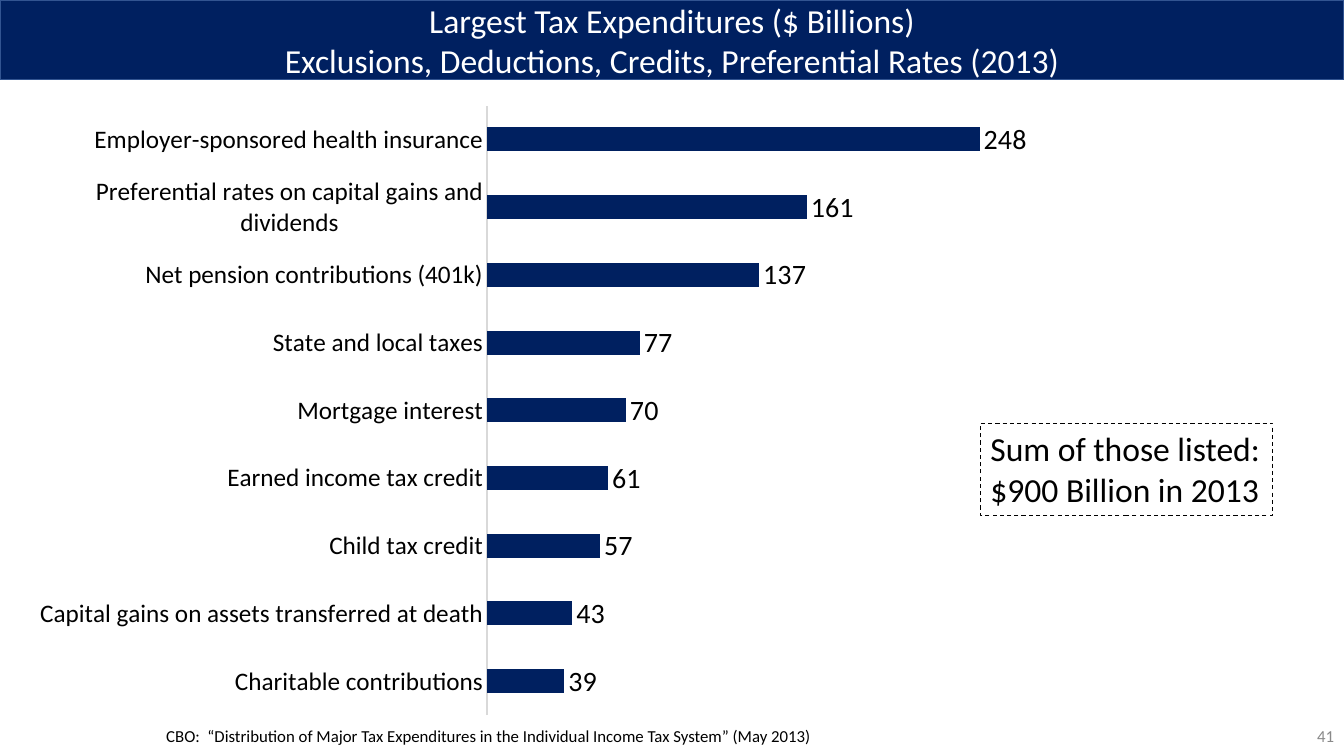
from dataclasses import dataclass

import pptx
import pptx.chart.data
import pptx.dml.color
import pptx.enum.chart
import pptx.enum.dml
import pptx.enum.shapes
import pptx.enum.text
import pptx.oxml
import pptx.util
from pptx.util import Cm

ALIGN = pptx.enum.text.PP_ALIGN
ANCHOR = pptx.enum.text.MSO_ANCHOR

EXPENDITURES = {
    "Charitable contributions": 39,
    "Capital gains on assets transferred at death": 43,
    "Child tax credit": 57,
    "Earned income tax credit": 61,
    "Mortgage interest": 70,
    "State and local taxes": 77,
    "Net pension contributions (401k)": 137,
    "Preferential rates on capital gains and dividends": 161,
    "Employer-sponsored health insurance": 248,
}


@dataclass(frozen=True)
class Theme:
    font: str = "Calibri"
    navy: str = "002060"
    banner_edge: str = "325491"
    white: str = "FFFFFF"
    black: str = "000000"
    gray: str = "898989"
    axis: str = "D9D9D9"
    heading: int = 24
    value: int = 20
    category: int = 18
    small: int = 12


def rgb(color):
    return pptx.dml.color.RGBColor.from_string(color)


def style_font(font, name, size, color):
    font.name = name
    font.size = pptx.util.Pt(size)
    font.color.rgb = rgb(color)


def write_text(frame, text, font, size, color, align=ALIGN.LEFT,
               anchor=ANCHOR.TOP, wrap=True):
    frame.word_wrap = wrap
    frame.vertical_anchor = anchor
    for index, line in enumerate(text.split("\n")):
        paragraph = frame.paragraphs[0] if index == 0 else frame.add_paragraph()
        paragraph.alignment = align
        run = paragraph.add_run()
        run.text = line
        style_font(run.font, font, size, color)


class SlideBuilder:
    def __init__(self, slide, theme):
        self.slide = slide
        self.theme = theme

    def text(self, text, box, **style):
        label = self.slide.shapes.add_textbox(*map(Cm, box))
        write_text(label.text_frame, text, self.theme.font, **style)

    def panel(self, text, box, edge, edge_width, fill=None, dash=None, **style):
        panel = self.slide.shapes.add_shape(
            pptx.enum.shapes.MSO_SHAPE.RECTANGLE, *map(Cm, box))
        panel.shadow.inherit = False
        if fill:
            panel.fill.solid()
            panel.fill.fore_color.rgb = rgb(fill)
        else:
            panel.fill.background()
        panel.line.color.rgb = rgb(edge)
        panel.line.width = pptx.util.Pt(edge_width)
        if dash:
            panel.line.dash_style = dash
        write_text(panel.text_frame, text, self.theme.font, **style)

    def bar_chart(self, values, box, maximum, plot):
        theme = self.theme
        data = pptx.chart.data.CategoryChartData()
        data.categories = list(values)
        data.add_series("Series 1", list(values.values()))
        chart = self.slide.shapes.add_chart(
            pptx.enum.chart.XL_CHART_TYPE.BAR_CLUSTERED, *map(Cm, box), data).chart
        chart.has_legend = False
        chart.has_title = False
        style_font(chart.font, theme.font, 10, theme.black)

        categories = chart.category_axis
        categories.major_tick_mark = pptx.enum.chart.XL_TICK_MARK.NONE
        categories.format.line.color.rgb = rgb(theme.axis)
        categories.format.line.width = pptx.util.Pt(0.75)
        style_font(categories.tick_labels.font, theme.font, theme.category, theme.black)

        amounts = chart.value_axis
        amounts.minimum_scale = 0
        amounts.maximum_scale = maximum
        amounts.has_major_gridlines = False
        amounts.visible = False

        bars = chart.plots[0]
        bars.gap_width = 182
        bars.vary_by_categories = False
        bars.series[0].format.fill.solid()
        bars.series[0].format.fill.fore_color.rgb = rgb(theme.navy)
        bars.has_data_labels = True
        bars.data_labels.show_value = True
        bars.data_labels.position = pptx.enum.chart.XL_LABEL_POSITION.OUTSIDE_END
        style_font(bars.data_labels.font, theme.font, theme.value, theme.black)
        self.place_plot(chart, plot)

    def place_plot(self, chart, plot):
        modes = '<c:layoutTarget val="inner"/><c:xMode val="edge"/><c:yMode val="edge"/>'
        sizes = "".join(f'<c:{key} val="{share}"/>' for key, share in plot.items())
        layout = pptx.oxml.parse_xml(
            '<c:layout xmlns:c="http://schemas.openxmlformats.org/drawingml/2006/chart">'
            f"<c:manualLayout>{modes}{sizes}</c:manualLayout></c:layout>")
        area = chart.plots[0]._element.getparent()
        for existing in area.findall(layout.tag):
            area.remove(existing)
        area.insert(0, layout)


def main():
    deck = pptx.Presentation()
    deck.slide_width, deck.slide_height = Cm(33.87), Cm(19.05)
    theme = Theme()
    page = SlideBuilder(deck.slides.add_slide(deck.slide_layouts[6]), theme)

    page.text("41", (26.25, 18.03, 7.62, 1.02), size=theme.small,
              color=theme.gray, align=ALIGN.RIGHT, anchor=ANCHOR.MIDDLE)
    page.panel("Largest Tax Expenditures ($ Billions)\n"
               "Exclusions, Deductions, Credits, Preferential Rates (2013)",
               (0, 0, 33.87, 2.01), theme.banner_edge, 1, fill=theme.navy,
               size=theme.heading, color=theme.white, align=ALIGN.CENTER,
               anchor=ANCHOR.MIDDLE)
    page.text("CBO:  “Distribution of Major Tax Expenditures in the Individual "
              "Income Tax System” (May 2013)",
              (3.94, 18.16, 18.54, 0.76), size=theme.small, color=theme.black)
    page.bar_chart(EXPENDITURES, (0.53, 2.34, 27.31, 16), 300,
                   {"x": 0.43, "y": 0.02, "w": 0.55, "h": 0.96})
    page.panel("Sum of those listed:\n$900 Billion in 2013",
               (24.71, 10.67, 7.37, 2.31), theme.black, 0.75,
               dash=pptx.enum.dml.MSO_LINE.DASH,
               size=theme.heading, color=theme.black, wrap=False)

    deck.save("out.pptx")


if __name__ == "__main__":
    main()
